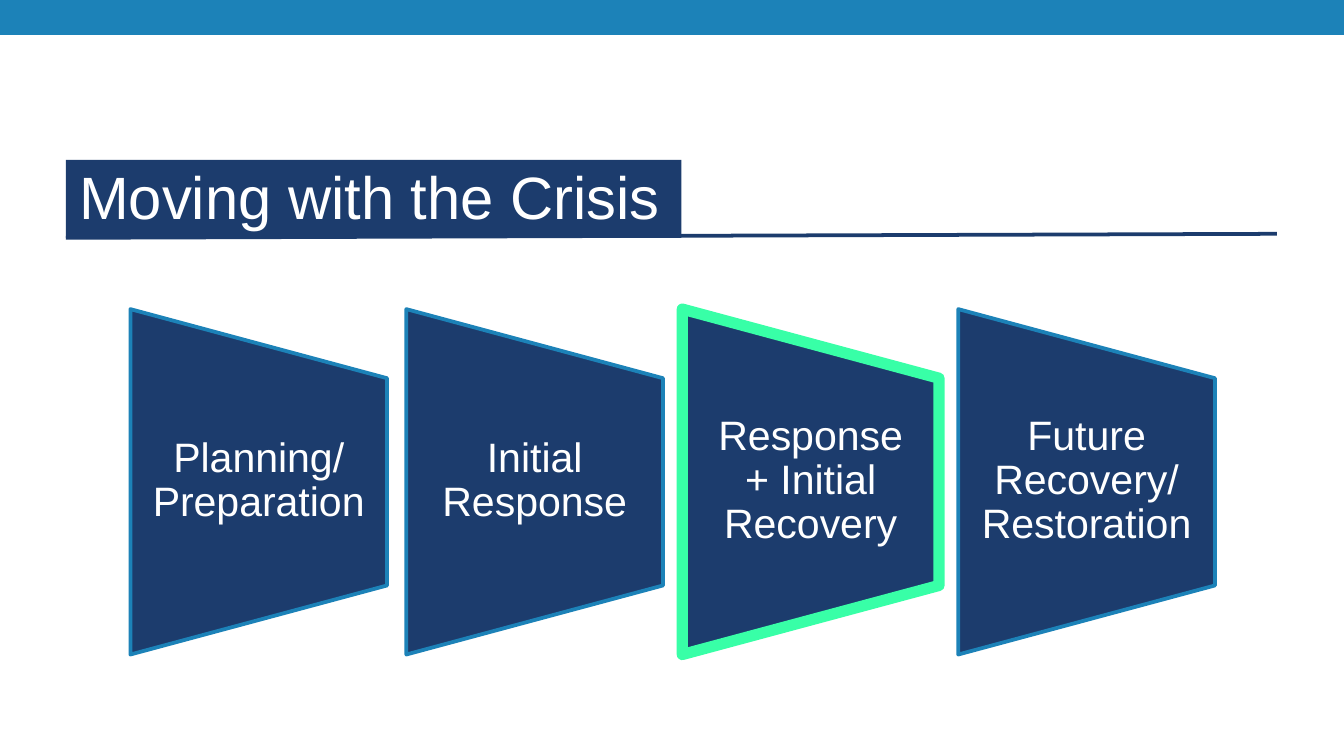
import pptx
import pptx.dml.color
import pptx.enum.shapes
import pptx.enum.text
import pptx.oxml.ns
import pptx.util
from lxml import etree

Inches = pptx.util.Inches
Pt = pptx.util.Pt
SHAPE = pptx.enum.shapes.MSO_SHAPE
ALIGN = pptx.enum.text.PP_ALIGN

NAVY, BLUE, GREEN, WHITE = "1C3C6D", "1C82B8", "38FFA7", "FFFFFF"
FIRST_X, LAST_X = 0.64, 6.8
PHASES = [
    ("Planning/\vPreparation", BLUE, 2),
    ("Initial Response", BLUE, 2),
    ("Response + Initial Recovery", GREEN, 6),
    ("Future Recovery/ Restoration", BLUE, 2),
]


def rgb(value):
    return pptx.dml.color.RGBColor.from_string(value)


def add_block(s, kind, x, y, w, h, fill, line=None, width=2):
    sp = s.shapes.add_shape(kind, Inches(x), Inches(y), Inches(w), Inches(h))
    sp.shadow.inherit = False
    sp.fill.solid()
    sp.fill.fore_color.rgb = rgb(fill)
    if line:
        sp.line.color.rgb = rgb(line)
        sp.line.width = Pt(width)
    else:
        sp.line.fill.background()
    return sp


def add_rule(s, x1, y1, x2, y2, color, width):
    ln = s.shapes.add_connector(
        pptx.enum.shapes.MSO_CONNECTOR.STRAIGHT,
        Inches(x1), Inches(y1), Inches(x2), Inches(y2))
    ln.line.color.rgb = rgb(color)
    ln.line.width = Pt(width)
    etree.SubElement(ln._element.spPr, pptx.oxml.ns.qn("a:effectLst"))


def set_text(sp, text, size=22, color=WHITE, align=ALIGN.CENTER,
             spacing=None, margins=(0.15, 0, 0.15, 0)):
    """Write one middle-anchored paragraph; margins are left, top, right, bottom."""
    tf = sp.text_frame
    tf.word_wrap = True
    tf.vertical_anchor = pptx.enum.text.MSO_ANCHOR.MIDDLE
    (tf.margin_left, tf.margin_top,
     tf.margin_right, tf.margin_bottom) = map(Inches, margins)
    p = tf.paragraphs[0]
    p.text = text
    p.alignment = align
    p.line_spacing = spacing
    for r in p.runs:
        r.font.name = "Arial"
        r.font.size = Pt(size)
        r.font.color.rgb = rgb(color)


def add_phase(s, x, text, outline, width):
    """Draw a trapezoid narrowing to the right, with its label on top."""
    sp = add_block(s, SHAPE.FLOWCHART_MANUAL_OPERATION,
                   x, 2.63, 2.57, 1.91, NAVY, outline, width)
    sp.rotation = 270
    label = s.shapes.add_textbox(
        Inches(x + 0.33), Inches(2.81), Inches(1.91), Inches(1.54))
    set_text(label, text, spacing=0.9)


def main():
    prs = pptx.Presentation()
    prs.slide_width = Inches(10)
    prs.slide_height = prs.slide_width * 9 // 16
    s = prs.slides.add_slide(prs.slide_layouts[6])

    add_rule(s, 0.49, 1.77, 9.5, 1.74, NAVY, 2)
    add_block(s, SHAPE.RECTANGLE, 0, 0, 10, 0.26, BLUE)
    title = add_block(s, SHAPE.RECTANGLE, 0.49, 1.19, 4.58, 0.58, NAVY)
    set_text(title, "Moving with the Crisis", size=32, align=ALIGN.LEFT,
             margins=(0.1, 0, 0.1, 0.05))

    pitch = (LAST_X - FIRST_X) / (len(PHASES) - 1)
    for i, (text, outline, width) in enumerate(PHASES):
        add_phase(s, FIRST_X + pitch * i, text, outline, width)

    prs.save("out.pptx")


if __name__ == "__main__":
    main()
